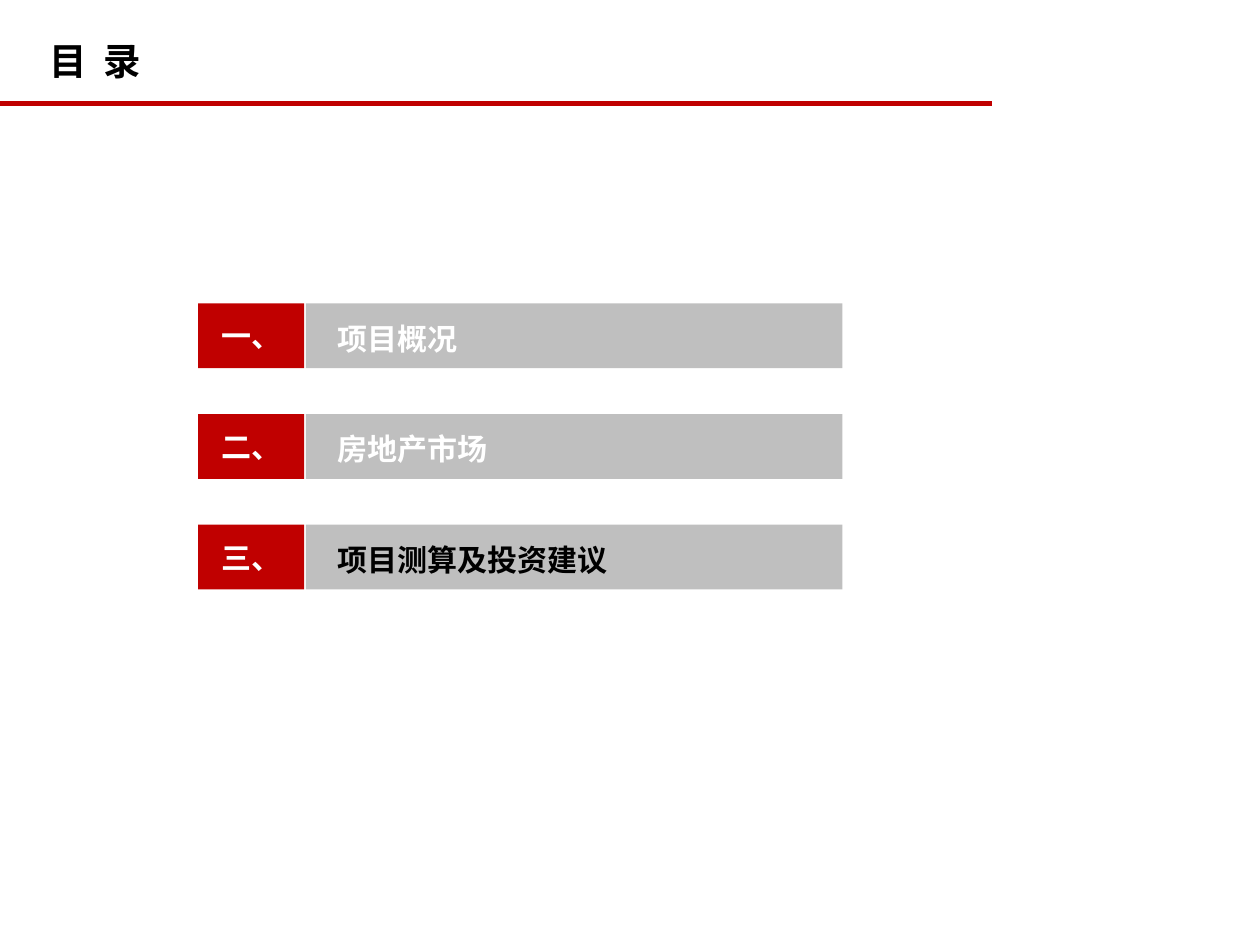
from pptx import Presentation
from pptx.dml.color import RGBColor
from pptx.enum.shapes import MSO_CONNECTOR, MSO_SHAPE
from pptx.enum.text import MSO_ANCHOR, PP_ALIGN
from pptx.util import Inches, Pt
from lxml import etree
from pptx.oxml.ns import qn

RECT, STRAIGHT = MSO_SHAPE.RECTANGLE, MSO_CONNECTOR.STRAIGHT
LEFT, CENTER = PP_ALIGN.LEFT, PP_ALIGN.CENTER
MIDDLE, BOTTOM = MSO_ANCHOR.MIDDLE, MSO_ANCHOR.BOTTOM
FONT = "Noto Sans CJK SC"
RED, GRAY, WHITE, BLACK = "C00000", "BFBFBF", "FFFFFF", "000000"

TITLE = "目 录"
SECTIONS = [
    ("一、", "项目概况", WHITE),
    ("二、", "房地产市场", WHITE),
    ("三、", "项目测算及投资建议", BLACK),
]
TOP, PITCH, HEIGHT = 3.37, 1.23, 0.72
NUMBER_X, NUMBER_W = 2.2, 1.18
LABEL_X, LABEL_W = 3.4, 5.96


def rgb(value):
    return RGBColor.from_string(value)


def write(s, text, size=24, color=WHITE, align=LEFT, anchor=MIDDLE,
          insets=(0.1, 0.05, 0.1, 0.05), spacing=0):
    tf = s.text_frame
    tf.word_wrap = True
    tf.vertical_anchor = anchor
    tf.margin_left, tf.margin_top, tf.margin_right, tf.margin_bottom = map(Inches, insets)
    p = tf.paragraphs[0]
    p.alignment = align
    r = p.add_run()
    r.text = text
    r.font.size = Pt(size)
    r.font.bold = True
    r.font.name = FONT
    r.font.color.rgb = rgb(color)
    props = r.font._element
    etree.SubElement(props, qn("a:ea")).set("typeface", FONT)
    if spacing:
        props.set("spc", str(round(spacing * 100)))


def add_bar(shapes, x, y, w, fill):
    s = shapes.add_shape(RECT, Inches(x), Inches(y), Inches(w), Inches(HEIGHT))
    s.shadow.inherit = False
    s.fill.solid()
    s.fill.fore_color.rgb = rgb(fill)
    s.line.fill.background()
    return s


def main():
    prs = Presentation()
    prs.slide_width, prs.slide_height = Inches(14), Inches(10.5)
    shapes = prs.slides.add_slide(prs.slide_layouts[6]).shapes

    rule = shapes.add_connector(STRAIGHT, 0, Inches(1.15), Inches(11.02), Inches(1.15))
    rule.line.color.rgb = rgb(RED)
    rule.line.width = Pt(4.5)
    etree.SubElement(rule._element.spPr, qn("a:effectLst"))

    title = shapes.add_textbox(Inches(0.55), Inches(0.42), Inches(1.95), Inches(0.57))
    write(title, TITLE, size=30, color=BLACK, anchor=BOTTOM,
          insets=(0, 0.07, 0.14, 0.07), spacing=3.35)

    for i, (number, label, color) in enumerate(SECTIONS):
        y = TOP + i * PITCH
        write(add_bar(shapes, NUMBER_X, y, NUMBER_W, RED), number, align=CENTER)
        write(add_bar(shapes, LABEL_X, y, LABEL_W, GRAY), label, color=color,
              insets=(0.35, 0.1, 0.1, 0.05))

    prs.save("out.pptx")


if __name__ == "__main__":
    main()
